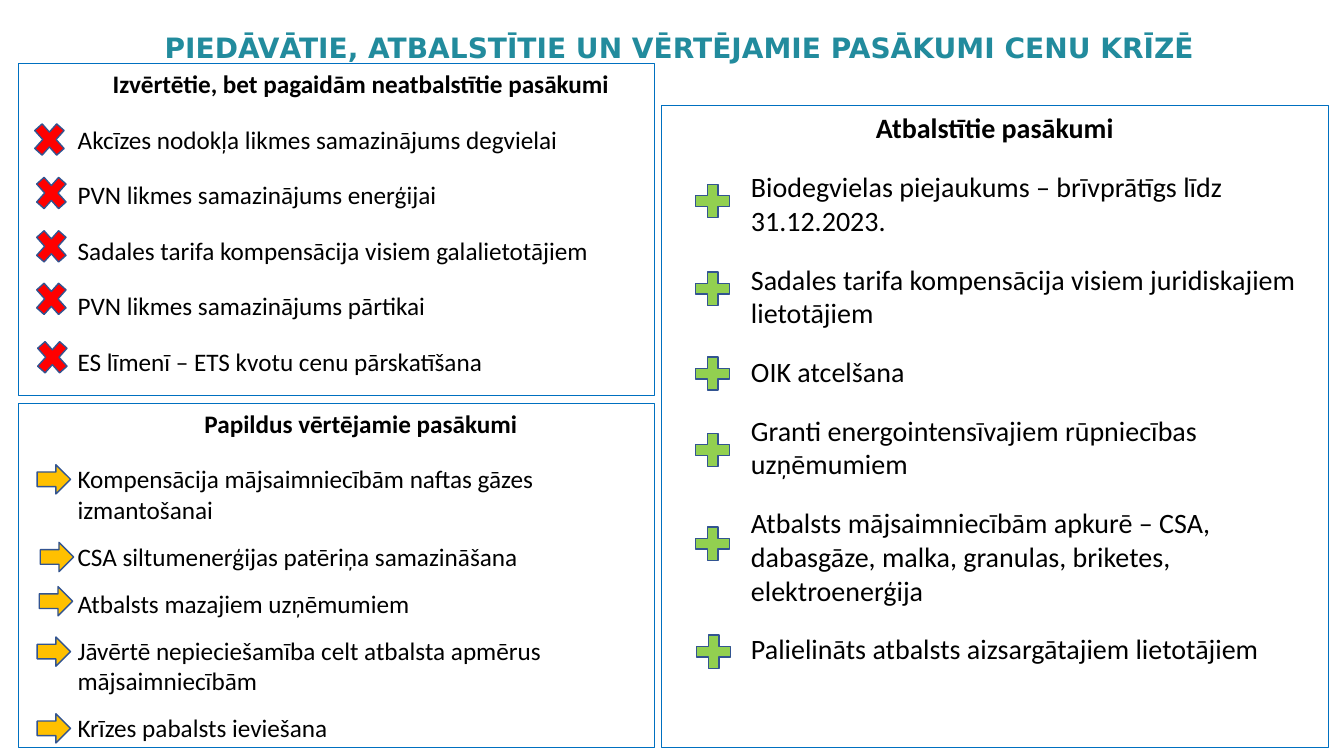
"""Build a slide of price crisis measures in three panels with marker icons."""
from dataclasses import dataclass

import pptx
import pptx.dml.color
import pptx.enum.shapes
import pptx.enum.text
import pptx.oxml.ns
import pptx.slide
import pptx.text.text
import pptx.util
from lxml import etree

Pt = pptx.util.Pt
RGB = pptx.dml.color.RGBColor
Mark = pptx.enum.shapes.MSO_SHAPE
Align = pptx.enum.text.PP_ALIGN
Anchor = pptx.enum.text.MSO_ANCHOR

TEAL = RGB(0x22, 0x8B, 0x9D)
BLUE = RGB(0x00, 0x70, 0xC0)
NAVY = RGB(0x32, 0x54, 0x91)
BLACK = RGB(0x00, 0x00, 0x00)
RED = RGB(0xFF, 0x00, 0x00)
GREEN = RGB(0x92, 0xD0, 0x50)
AMBER = RGB(0xFF, 0xC0, 0x00)


@dataclass
class Panel:
    box: tuple[float, float, float, float]
    head: str
    items: list[str]
    size: float
    indent: float
    shift: float
    before: float
    after: float
    gap: float


@dataclass
class Icons:
    kind: Mark
    fill: RGB
    width: float
    height: float
    spots: list[tuple[float, float]]


LEFT = Panel(
    (13, 45.4, 454.3, 236.9), "Izvērtētie, bet pagaidām neatbalstītie pasākumi",
    ["Akcīzes nodokļa likmes samazinājums degvielai",
     "PVN likmes samazinājums enerģijai",
     "Sadales tarifa kompensācija visiem galalietotājiem",
     "PVN likmes samazinājums pārtikai",
     "ES līmenī – ETS kvotu cenu pārskatīšana"],
    18, 35.3, 35.3, 0, 18, 18)
RIGHT = Panel(
    (472.3, 75.6, 476.6, 458.6), "Atbalstītie pasākumi",
    ["Biodegvielas piejaukums – brīvprātīgs līdz 31.12.2023.",
     "Sadales tarifa kompensācija visiem juridiskajiem lietotājiem",
     "OIK atcelšana",
     "Granti energointensīvajiem rūpniecības uzņēmumiem",
     "Atbalsts mājsaimniecībām apkurē – CSA, dabasgāze, malka, granulas, "
     "briketes, elektroenerģija",
     "Palielināts atbalsts aizsargātajiem lietotājiem"],
    20, 56.9, 0, 10, 8, 8)
LOWER = Panel(
    (13, 288, 454.3, 246.2), "Papildus vērtējamie pasākumi",
    ["Kompensācija mājsaimniecībām naftas gāzes izmantošanai",
     "CSA siltumenerģijas patēriņa samazināšana",
     "Atbalsts mazajiem uzņēmumiem",
     "Jāvērtē nepieciešamība celt atbalsta apmērus mājsaimniecībām",
     "Krīzes pabalsts ieviešana"],
    18, 35.3, 35.3, 0, 18, 12)

ICONS = [
    Icons(Mark.MATH_MULTIPLY, RED, 30.2, 33.8,
          [(20.2, 82.8), (21.6, 121), (21.6, 159.1), (21.6, 196.6), (22.3, 238.3)]),
    Icons(Mark.MATH_PLUS, GREEN, 33.1, 32.4,
          [(492.5, 127.4), (492.5, 190.1), (492.5, 250.6), (492.5, 305.3),
           (492.5, 372.2), (493.2, 449.3)]),
    Icons(Mark.RIGHT_ARROW, AMBER, 23.8, 20.9,
          [(26.6, 331.9), (28.8, 387.4), (28.1, 419), (26.6, 455), (26.6, 509.8)]),
]


def place(shape, box: tuple[float, float, float, float]) -> None:
    for name, value in zip(("left", "top", "width", "height"), box):
        setattr(shape, name, Pt(value))


def write(para: pptx.text.text._Paragraph, text: str, color: RGB,
          font: dict, form: dict, indent: float = 0) -> None:
    run = para.add_run()
    run.text = text
    run.font.color.rgb = color
    for name, value in font.items():
        setattr(run.font, name, value)
    for name, value in form.items():
        setattr(para, name, value)
    props = para._p.get_or_add_pPr()
    props.set("marL", str(Pt(indent)))
    props.set("indent", "0")
    etree.SubElement(props, pptx.oxml.ns.qn("a:buNone"))


def fill_panel(shape, panel: Panel) -> None:
    place(shape, panel.box)
    shape.line.color.rgb = BLUE
    shape.line.width = Pt(0.75)
    frame = shape.text_frame
    frame.word_wrap = True
    frame.auto_size = pptx.enum.text.MSO_AUTO_SIZE.NONE
    frame.vertical_anchor = Anchor.TOP
    for row, text in enumerate([panel.head, *panel.items]):
        top = row == 0
        para = frame.paragraphs[0] if top else frame.add_paragraph()
        font = {"name": "Calibri", "size": Pt(panel.size), "bold": top}
        form = {"alignment": Align.CENTER if top else Align.LEFT,
                "line_spacing": 1.0,
                "space_before": Pt(panel.before),
                "space_after": Pt(panel.after if top else panel.gap)}
        write(para, text, BLACK, font, form, panel.shift if top else panel.indent)


def draw_icons(slide: pptx.slide.Slide, icons: Icons) -> None:
    for left, top in icons.spots:
        mark = slide.shapes.add_shape(
            icons.kind, Pt(left), Pt(top), Pt(icons.width), Pt(icons.height))
        mark.shadow.inherit = False
        mark.fill.solid()
        mark.fill.fore_color.rgb = icons.fill
        mark.line.color.rgb = NAVY
        mark.line.width = Pt(1)


def main() -> None:
    deck = pptx.Presentation()
    deck.slide_width, deck.slide_height = Pt(960), Pt(540)
    slide = deck.slides.add_slide(deck.slide_layouts[3])
    title = slide.shapes.title
    place(title, (71.3, -11.5, 828, 93.6))
    title.text_frame.vertical_anchor = Anchor.MIDDLE
    write(title.text_frame.paragraphs[0],
          "PIEDĀVĀTIE, ATBALSTĪTIE UN VĒRTĒJAMIE PASĀKUMI CENU KRĪZĒ", TEAL,
          {"name": "DejaVu Sans", "size": Pt(20), "bold": True},
          {"alignment": Align.CENTER, "line_spacing": 0.9})
    fill_panel(slide.placeholders[1], LEFT)
    fill_panel(slide.placeholders[2], RIGHT)
    fill_panel(slide.shapes.add_textbox(*map(Pt, LOWER.box)), LOWER)
    for icons in ICONS:
        draw_icons(slide, icons)
    deck.save("out.pptx")


if __name__ == "__main__":
    main()
